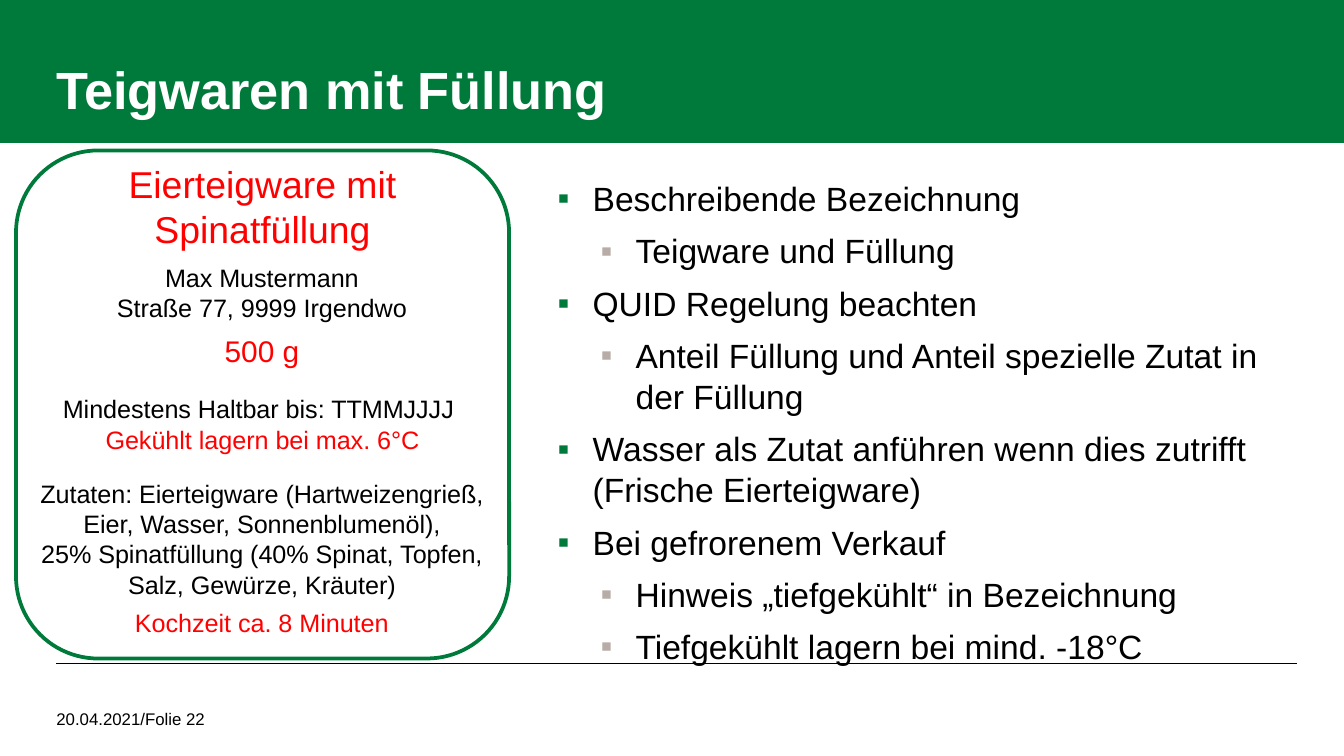
from collections import namedtuple
from dataclasses import dataclass

from lxml.etree import SubElement
from pptx import Presentation
from pptx.dml.color import RGBColor
from pptx.enum.shapes import MSO_CONNECTOR as Connector, MSO_SHAPE as Shape
from pptx.enum.text import MSO_ANCHOR as Anchor, MSO_AUTO_SIZE as AutoSize, PP_ALIGN as Align
from pptx.oxml.ns import qn
from pptx.util import Pt

Box = namedtuple("Box", "left top width height")


@dataclass(frozen=True)
class Theme:
    font: str = "Arial"
    green: RGBColor = RGBColor(0x00, 0x7A, 0x3B)
    grey: RGBColor = RGBColor(0xB8, 0xAC, 0xA6)
    red: RGBColor = RGBColor(0xFF, 0x00, 0x00)
    black: RGBColor = RGBColor(0x00, 0x00, 0x00)
    white: RGBColor = RGBColor(0xFF, 0xFF, 0xFF)
    title: float = 28
    product: float = 20
    body: float = 18
    weight: float = 16
    detail: float = 13.5
    footer: float = 9


THEME = Theme()

POINTS = [
    (0, "Beschreibende Bezeichnung"),
    (1, "Teigware und Füllung"),
    (0, "QUID Regelung beachten"),
    (1, "Anteil Füllung und Anteil spezielle Zutat in der Füllung"),
    (0, "Wasser als Zutat anführen wenn dies zutrifft (Frische Eierteigware)"),
    (0, "Bei gefrorenem Verkauf"),
    (1, "Hinweis „tiefgekühlt“ in Bezeichnung"),
    (1, "Tiefgekühlt lagern bei mind. -18°C"),
]

# Offset within the label, wrapping, size, colour, paragraph format, lines
LABEL_TEXTS = [
    (Box(8.6, 2.2, 247, 55.4), True, THEME.product, THEME.red, {},
     ["Eierteigware mit Spinatfüllung"]),
    (Box(23, 56.2, 217.4, 40.3), True, THEME.detail, THEME.black, {},
     ["Max Mustermann", "Straße 77, 9999 Irgendwo"]),
    (Box(18, 108.7, 226.8, 41.8), False, THEME.detail, THEME.black,
     {"alignment": Align.LEFT, "line_spacing": Pt(34)},
     ["Mindestens Haltbar bis: TTMMJJJJ"]),
    (Box(39.6, 143.3, 185, 23.8), False, THEME.detail, THEME.red, {},
     ["Gekühlt lagern bei max. 6°C"]),
    (Box(104.4, 94.3, 54.7, 26.6), False, THEME.weight, THEME.red, {},
     ["500 g"]),
    (Box(2.2, 172.1, 259.2, 72.7), False, THEME.detail, THEME.black, {},
     ["Zutaten: Eierteigware (Hartweizengrieß,", "Eier, Wasser, Sonnenblumenöl),",
      "25% Spinatfüllung (40% Spinat, Topfen,", "Salz, Gewürze, Kräuter)"]),
    (Box(55.4, 241.2, 152.6, 23.8), False, THEME.detail, THEME.red, {},
     ["Kochzeit ca. 8 Minuten"]),
]


def apply(target, values):
    for name, value in values.items():
        setattr(target, name, value)


def place(shape, box):
    apply(shape, {name: Pt(value) for name, value in box._asdict().items()})


def set_frame(frame, insets=(0, 0, 0, 0), **values):
    sides = ("margin_left", "margin_top", "margin_right", "margin_bottom")
    apply(frame, dict(zip(sides, map(Pt, insets))))
    apply(frame, {"word_wrap": True, "auto_size": AutoSize.NONE, **values})


def write(para, text, size, color, bold=False, **values):
    apply(para, values)
    span = para.add_run()
    span.text = text
    apply(span.font, {"name": THEME.font, "size": Pt(size), "bold": bold})
    span.font.color.rgb = color


def next_para(frame, index):
    return frame.add_paragraph() if index else frame.paragraphs[0]


def set_bullet(para, indent, hanging, color):
    props = para._p.get_or_add_pPr()
    props.set("marL", str(Pt(indent)))
    props.set("indent", str(-Pt(hanging)))
    SubElement(SubElement(props, qn("a:buClr")), qn("a:srgbClr"), val=str(color))
    SubElement(props, qn("a:buFont"), typeface=THEME.font)
    SubElement(props, qn("a:buChar"), char="▪")


def add_title(page, box):
    title = page.shapes.title
    place(title, box)
    title.fill.solid()
    title.fill.fore_color.rgb = THEME.green
    set_frame(title.text_frame, (30.2, 14.4, 30.2, 11.5), vertical_anchor=Anchor.BOTTOM)
    write(title.text_frame.paragraphs[0], "Teigwaren mit Füllung", THEME.title, THEME.white,
          bold=True, alignment=Align.LEFT, line_spacing=0.95)


def add_points(page, box):
    body = page.placeholders[1]
    place(body, box)
    set_frame(body.text_frame, vertical_anchor=Anchor.TOP)
    for index, (level, text) in enumerate(POINTS):
        para = next_para(body.text_frame, index)
        write(para, text, THEME.body, THEME.black, level=level, alignment=Align.LEFT,
              line_spacing=Pt(22), space_before=Pt(0), space_after=Pt(6))
        set_bullet(para, 23 * (level + 1), 18.7, THEME.grey if level else THEME.green)


def add_label(page, box):
    # Rounded outline
    outline = page.shapes.add_shape(Shape.ROUNDED_RECTANGLE, *map(Pt, box))
    outline.shadow.inherit = False
    outline.fill.solid()
    outline.fill.fore_color.rgb = THEME.white
    outline.line.color.rgb = THEME.green
    outline.line.width = Pt(2)

    # Label texts
    for offset, wrap, size, color, values, lines in LABEL_TEXTS:
        spot = offset._replace(left=box.left + offset.left, top=box.top + offset.top)
        frame = page.shapes.add_textbox(*map(Pt, spot)).text_frame
        set_frame(frame, (7.2, 3.6, 7.2, 3.6), word_wrap=wrap,
                  auto_size=AutoSize.SHAPE_TO_FIT_TEXT)
        for index, text in enumerate(lines):
            write(next_para(frame, index), text, size, color,
                  **{"alignment": Align.CENTER, **values})


def add_footer(page, box):
    # Rule along the top of the footer
    rule = page.shapes.add_connector(Connector.STRAIGHT, Pt(box.left), Pt(box.top),
                                     Pt(box.left + box.width), Pt(box.top))
    rule.line.color.rgb = THEME.black
    rule.line.width = Pt(0.5)
    SubElement(rule._element.spPr, qn("a:effectLst"))

    # Date and page number
    note = page.shapes.add_textbox(Pt(box.left), Pt(box.top + 15.1), Pt(386), Pt(27.4))
    set_frame(note.text_frame, vertical_anchor=Anchor.MIDDLE)
    write(note.text_frame.paragraphs[0], "20.04.2021/Folie 22", THEME.footer, THEME.black,
          line_spacing=Pt(12))


def main():
    deck = Presentation()
    apply(deck, {"slide_width": Pt(720), "slide_height": Pt(405)})
    page = deck.slides.add_slide(deck.slide_layouts[1])
    add_footer(page, Box(30.2, 355.7, 664.6, 42.5))
    add_title(page, Box(0, 0, 720, 76.5))
    add_points(page, Box(294.5, 95, 396, 235.4))
    add_label(page, Box(8.6, 80.6, 264.2, 272.2))
    deck.save("out.pptx")


if __name__ == "__main__":
    main()
